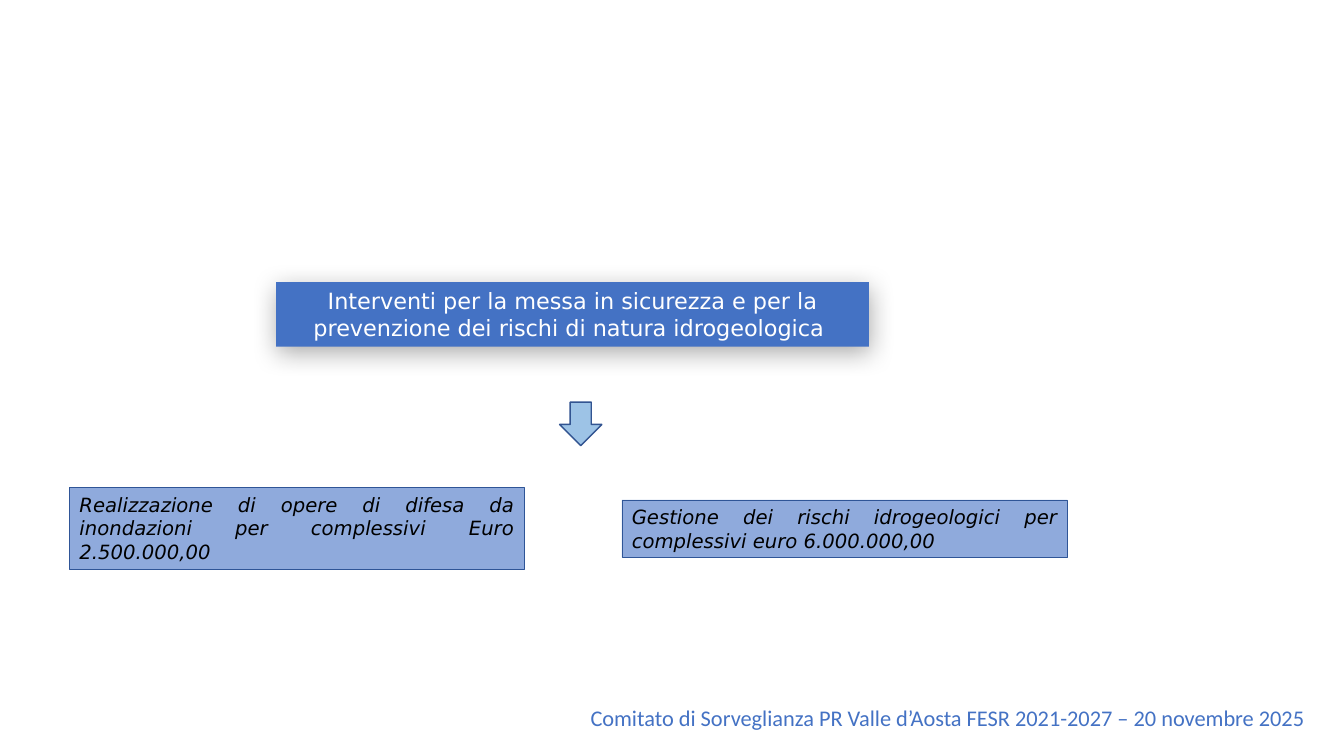
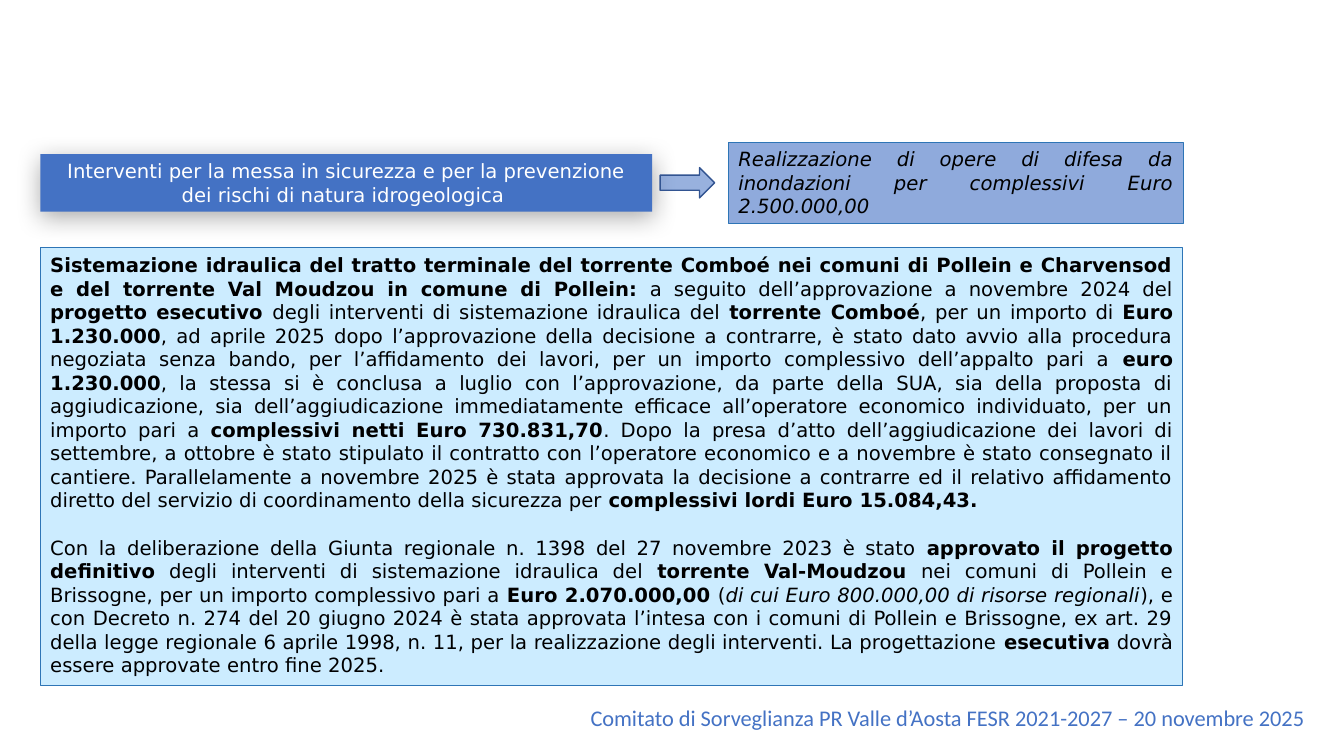
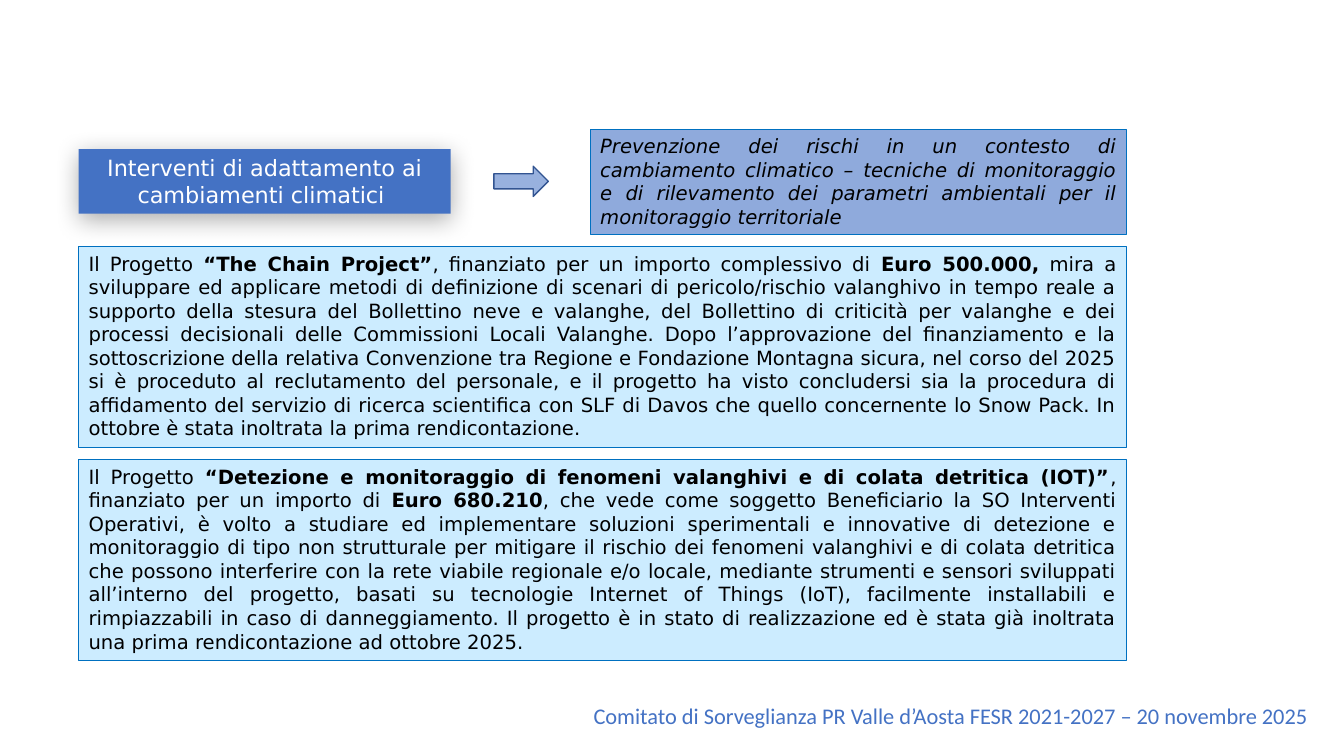
from lxml import etree
from pptx import Presentation
from pptx.dml.color import RGBColor
from pptx.enum.shapes import MSO_SHAPE
from pptx.enum.text import MSO_ANCHOR, MSO_AUTO_SIZE, PP_ALIGN
from pptx.oxml.ns import qn
from pptx.util import Pt

RECT, DOWN, RIGHT = MSO_SHAPE.RECTANGLE, MSO_SHAPE.DOWN_ARROW, MSO_SHAPE.RIGHT_ARROW
TOP, GROW = MSO_ANCHOR.TOP, MSO_AUTO_SIZE.SHAPE_TO_FIT_TEXT
LEFT, MID, FULL = PP_ALIGN.LEFT, PP_ALIGN.CENTER, PP_ALIGN.JUSTIFY

BLUE = RGBColor(0x44, 0x72, 0xC4)
SOFT = RGBColor(0x8F, 0xAA, 0xDC)
PALE = RGBColor(0xCC, 0xEC, 0xFF)
SKY = RGBColor(0x9D, 0xC3, 0xE6)
NAVY = RGBColor(0x2F, 0x55, 0x97)
EDGE = RGBColor(0x32, 0x54, 0x91)
STEEL = RGBColor(0x2E, 0x75, 0xB6)
AZURE = RGBColor(0x00, 0x70, 0xC0)
BLACK = RGBColor(0, 0, 0)
WHITE = RGBColor(0xFF, 0xFF, 0xFF)

FONT, FOOT_FONT = "DejaVu Sans", "Calibri"
WIDE, HIGH = 960, 540
FOOT = "Comitato di Sorveglianza PR Valle d’Aosta FESR 2021-2027 – 20 novembre 2025"
SAFETY = ("Interventi per la messa in sicurezza e per la prevenzione "
          "dei rischi di natura idrogeologica ")
FLOOD = ("Realizzazione di opere di difesa da inondazioni "
         "per complessivi Euro 2.500.000,00")
RISK = "Gestione dei rischi idrogeologici per complessivi euro 6.000.000,00"
CLIMATE = "Interventi di adattamento ai cambiamenti climatici "
WATCH = ("Prevenzione dei rischi in un contesto di cambiamento climatico – tecniche "
         "di monitoraggio e di rilevamento dei parametri ambientali per il "
         "monitoraggio territoriale")

# In long texts, *stars* mark bold and _underscores_ mark italic.
TENDER = (
    "*Sistemazione idraulica del tratto terminale del torrente Comboé nei comuni di "
    "Pollein e Charvensod e del torrente Val Moudzou in comune di Pollein:* a seguito "
    "dell’approvazione a novembre 2024 del *progetto esecutivo *degli interventi di "
    "sistemazione idraulica del *torrente Comboé*, per un importo di *Euro 1.230.000*, "
    "ad aprile 2025 dopo l’approvazione della decisione a contrarre, è stato dato avvio "
    "alla procedura negoziata senza bando, per l’affidamento dei lavori, per un importo "
    "complessivo dell’appalto pari a *euro 1.230.000*, ")
AWARD = (
    "la stessa si è conclusa a luglio "
    "con l’approvazione, da parte della SUA, sia della proposta di aggiudicazione, sia "
    "dell’aggiudicazione immediatamente efficace all’operatore economico individuato, "
    "per un importo pari a *complessivi netti Euro 730.831,70*. Dopo la presa d’atto "
    "dell’aggiudicazione dei lavori di settembre, a ottobre è stato stipulato il "
    "contratto con l’operatore economico e a novembre è stato consegnato il cantiere. "
    "Parallelamente a novembre 2025 è stata approvata la decisione a contrarre ed il "
    "relativo affidamento diretto del servizio di coordinamento della sicurezza per "
    "*complessivi lordi Euro 15.084,43. *")
MOUDZOU = (
    "Con la deliberazione della Giunta regionale n. 1398 del 27 novembre 2023 è stato "
    "*approvato il progetto definitivo* degli interventi di sistemazione idraulica del "
    "*torrente Val-Moudzou *nei comuni di Pollein e Brissogne, per un importo "
    "complessivo pari a *Euro 2.070.000,00 *(_di cui Euro 800.000,00 di risorse "
    "regionali_), e con Decreto n. 274 del 20 giugno 2024 è stata approvata l’intesa "
    "con i comuni di Pollein e Brissogne, ex art. 29 della legge regionale 6 aprile "
    "1998, n. 11, per la realizzazione degli interventi. La progettazione *esecutiva* "
    "dovrà essere approvate entro fine 2025.")
CHAIN = (
    "Il Progetto *“The Chain Project”*, finanziato per un importo complessivo di *Euro "
    "500.000,* mira a sviluppare ed applicare metodi di definizione di scenari di "
    "pericolo/rischio valanghivo in tempo reale a supporto della stesura del Bollettino "
    "neve e valanghe, del Bollettino di criticità per valanghe e dei processi "
    "decisionali delle Commissioni Locali Valanghe. Dopo l’approvazione del "
    "finanziamento e la sottoscrizione della relativa Convenzione tra Regione e "
    "Fondazione Montagna sicura, nel corso del 2025 si è proceduto al reclutamento del "
    "personale, e il progetto ha visto concludersi sia la procedura di affidamento del "
    "servizio di ricerca scientifica con SLF di Davos che quello concernente lo Snow "
    "Pack. In ottobre è stata inoltrata la prima rendicontazione. ")
SENSOR = (
    "Il Progetto *“Detezione e monitoraggio di fenomeni valanghivi e di colata detritica "
    "(IOT)”*, finanziato per un importo di *Euro 680.210*, che vede come soggetto "
    "Beneficiario la SO Interventi Operativi, è volto a studiare ed implementare "
    "soluzioni sperimentali e innovative di detezione e monitoraggio di tipo non "
    "strutturale per mitigare il rischio dei fenomeni valanghivi e di colata detritica "
    "che possono interferire con la rete viabile regionale e/o locale, mediante "
    "strumenti e sensori sviluppati all’interno del progetto, basati su tecnologie "
    "Internet of Things (IoT), facilmente installabili e rimpiazzabili in caso di "
    "danneggiamento. Il progetto è in stato di realizzazione ed è stata già inoltrata "
    "una prima rendicontazione ad ottobre 2025.")


def write(shape, texts, size, color, align, font=FONT, slant=None):
    """Fill a shape with paragraphs, turning marks into bold and italic runs."""
    frame = shape.text_frame
    frame.word_wrap = True
    frame.auto_size = GROW
    frame.vertical_anchor = TOP
    for n, text in enumerate(texts):
        para = frame.add_paragraph() if n else frame.paragraphs[0]
        para.alignment = align
        if n:
            para.space_before = Pt(17)
        face = para.font
        face.name, face.size, face.italic = font, Pt(size), slant
        face.color.rgb = color
        for i, part in enumerate(text.split("*")):
            for j, bit in enumerate(part.split("_")):
                if bit:
                    run = para.add_run()
                    run.text = bit
                    if i % 2:
                        run.font.bold = True
                    if j % 2:
                        run.font.italic = True


def draw(slide, kind, box, fill, line=None, width=1):
    shape = slide.shapes.add_shape(kind, *map(Pt, box))
    shape.shadow.inherit = False
    shape.fill.solid()
    shape.fill.fore_color.rgb = fill
    if line is None:
        shape.line.fill.background()
    else:
        shape.line.color.rgb = line
        shape.line.width = Pt(width)
    return shape


def cast(shape):
    """Give a shape a soft shadow below it."""
    glow = shape._element.spPr.find(qn("a:effectLst"))
    drop = etree.SubElement(glow, qn("a:outerShdw"), blurRad=str(Pt(17.8)),
                            dist=str(Pt(4)), dir=str(87 * 60000),
                            algn="ctr", rotWithShape="0")
    tone = etree.SubElement(drop, qn("a:srgbClr"), val=str(BLACK))
    etree.SubElement(tone, qn("a:alpha"), val="33000")


def title(slide, box, text, size):
    shape = draw(slide, RECT, box, BLUE)
    cast(shape)
    write(shape, [text], size, WHITE, MID)


def item(slide, box, text, line):
    shape = draw(slide, RECT, box, SOFT, line, 0.5)
    write(shape, [text], 14, BLACK, FULL, slant=True)


def body(slide, box, texts, line):
    shape = draw(slide, RECT, box, PALE, line, 0.75)
    write(shape, texts, 14, BLACK, FULL)


def arrow(slide, box):
    """Draw a see-through arrow to the right."""
    shape = draw(slide, RIGHT, box, BLUE, EDGE)
    tone = shape._element.spPr.find(qn("a:solidFill"))[0]
    etree.SubElement(tone, qn("a:alpha"), val="55000")


def footer(slide, left, top):
    shape = slide.shapes.add_textbox(*map(Pt, (left, top, 531.4, 26.6)))
    write(shape, [FOOT], 16, BLUE, LEFT, FOOT_FONT)


def tree(slide, box):
    """Place a title over an arrow and two items."""
    x, y, w, h = box
    title(slide, (x + 147.6, y, 423.4, 46.1), SAFETY, 16)
    draw(slide, DOWN, (x + 350, y + 85.7, 30.2, 31), SKY, EDGE)
    mid = y + h - 29.2
    for left, wide, high, text in ((x, 324.7, 58.3, FLOOD),
                                   (x + w - 318.2, 318.2, 41, RISK)):
        item(slide, (left, mid - high / 2, wide, high), text, NAVY)


def detail(slide, box, head, aim, shift, gap, blocks, line):
    """Place title, arrow and item in a row, with equal text blocks below.

    head and aim hold width, height and text; head adds the text size.
    """
    x, y, w, h = box
    wide, high, text, size = head
    span, tall, goal = aim
    mid = y + tall / 2
    title(slide, (x, mid - high / 2, wide, high), text, size)
    arrow(slide, (x + shift, mid - 10.9, 38.9, 21.6))
    item(slide, (x + w - span, y, span, tall), goal, line)
    step = (h - tall) / len(blocks)
    for n, texts in enumerate(blocks):
        body(slide, (x, y + tall + gap + n * step, w, step - gap), texts, line)


def main():
    deck = Presentation()
    deck.slide_width, deck.slide_height = Pt(WIDE), Pt(HIGH)
    one, two, three = (deck.slides.add_slide(deck.slide_layouts[6]) for _ in range(3))

    tree(one, (49.7, 201.6, 712.7, 205.2))
    footer(one, 414.7, 499.7)

    detail(two, (28.8, 101.5, 816.2, 388.1), (437, 41, SAFETY, 14),
           (324.7, 58.3, FLOOD), 442.8, 17.3, [[TENDER + AWARD, MOUDZOU]], STEEL)
    footer(two, 414.7, 499.7)

    detail(three, (56.2, 92.2, 748.4, 379.5), (265.7, 46.1, CLIMATE, 16),
           (383, 74.9, WATCH), 296.6, 9, [[CHAIN], [SENSOR]], AZURE)
    footer(three, 416.9, 498.2)

    deck.save("out.pptx")


if __name__ == "__main__":
    main()
